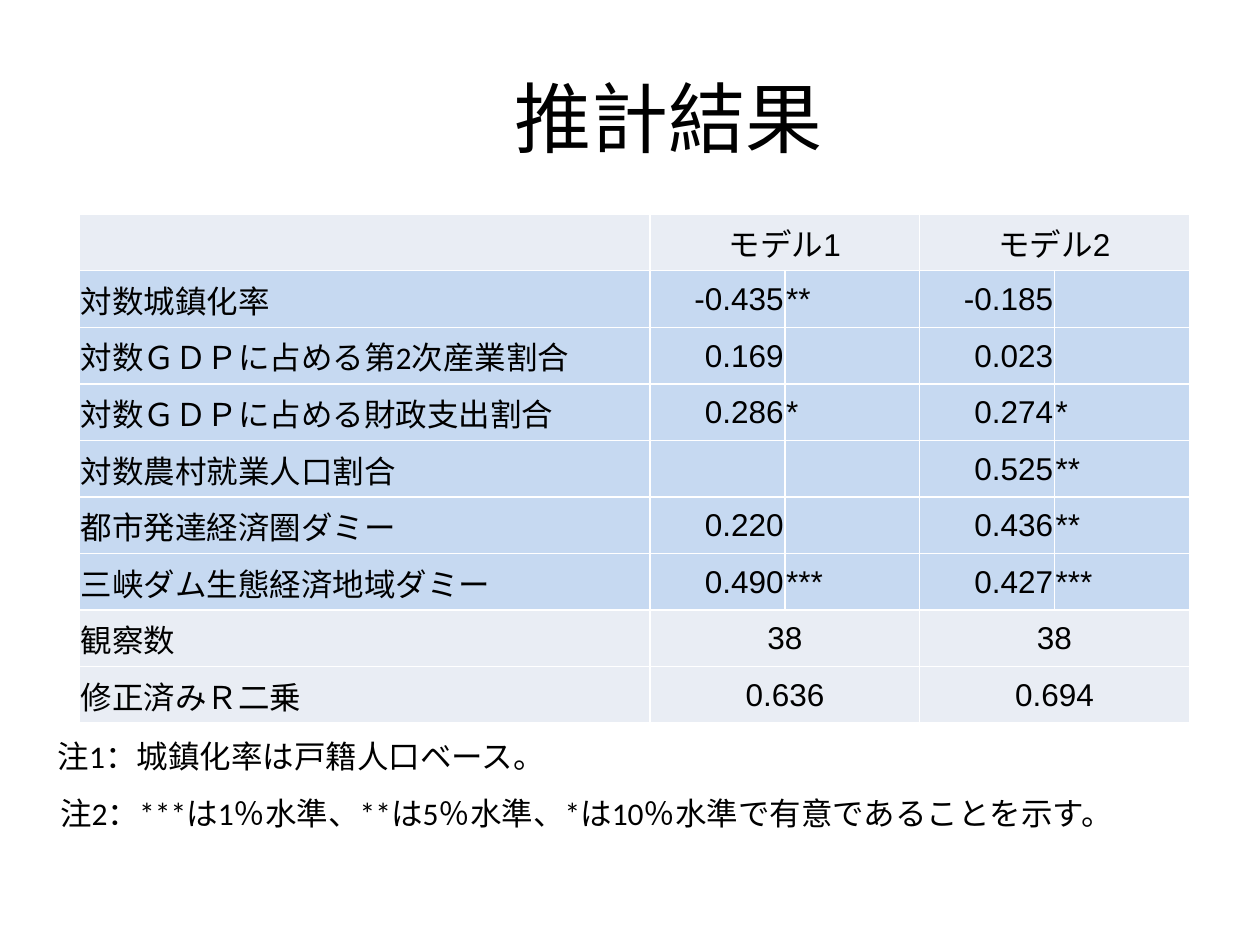
from lxml import etree
from pptx import Presentation
from pptx.dml.color import RGBColor
from pptx.enum.text import MSO_ANCHOR, PP_ALIGN
from pptx.oxml.ns import qn
from pptx.util import Inches, Pt

LEFT, CENTER, RIGHT = PP_ALIGN.LEFT, PP_ALIGN.CENTER, PP_ALIGN.RIGHT
TOP, MIDDLE = MSO_ANCHOR.TOP, MSO_ANCHOR.MIDDLE
BLACK = RGBColor(0x00, 0x00, 0x00)
GREY = RGBColor(0xE9, 0xED, 0xF4)
BLUE = RGBColor(0xC6, 0xD9, 0xF1)
BORDER = "FFFFFF"
CALIBRI, ARIAL, NOTO = "Calibri", "Arial", "Noto Sans CJK JP"

TEXTS = [
    ("　推計結果", (0.5, 0.3, 9, 1.25), 44, CENTER, MIDDLE),
    ("注1：城鎮化率は戸籍人口ベース。", (0.36, 5.8, 9.37, 0.4), 18, LEFT, TOP),
    ("注2：***は1％水準、**は5％水準、*は10％水準で有意であることを示す。",
     (0.38, 6.25, 9.37, 0.4), 18, LEFT, TOP),
]
HEADER = [("", CALIBRI, "モデル1", "モデル2")]
ESTIMATES = [
    ("対数城鎮化率", CALIBRI, "-0.435", "**", "-0.185", ""),
    ("対数ＧＤＰに占める第2次産業割合", CALIBRI, "0.169", "", "0.023", ""),
    ("対数ＧＤＰに占める財政支出割合", NOTO, "0.286", "*", "0.274", "*"),
    ("対数農村就業人口割合", NOTO, "", "", "0.525", "**"),
    ("都市発達経済圏ダミー", CALIBRI, "0.220", "", "0.436", "**"),
    ("三峡ダム生態経済地域ダミー", CALIBRI, "0.490", "***", "0.427", "***"),
]
SUMMARY = [
    ("観察数", CALIBRI, "38", "38"),
    ("修正済みＲ二乗", CALIBRI, "0.636", "0.694"),
]
ROWS = HEADER + ESTIMATES + SUMMARY
COL_WIDTHS = [4.53] + [1.07] * 4
TABLE_LEFT, TABLE_TOP, TABLE_HEIGHT = 0.63, 1.7, 4.04
CELL_FORMAT = {
    "margin_left": Inches(0.01), "margin_right": Inches(0.01),
    "margin_top": Inches(0.01), "margin_bottom": 0,
    "vertical_anchor": MIDDLE,
}


def write(tf, text, size, font, align):
    p = tf.paragraphs[0]
    p.alignment = align
    p.font.size = Pt(size)
    if not text:
        return
    r = p.add_run()
    r.text = text
    r.font.color.rgb = BLACK
    for name, value in {"name": font, "size": Pt(size), "bold": False}.items():
        setattr(r.font, name, value)


def add_borders(cell):
    tc_pr = cell._tc.get_or_add_tcPr()
    for i, side in enumerate(("a:lnL", "a:lnR", "a:lnT", "a:lnB")):
        ln = etree.Element(qn(side), w=str(Pt(1)))
        fill = etree.SubElement(ln, qn("a:solidFill"))
        etree.SubElement(fill, qn("a:srgbClr"), val=BORDER)
        tc_pr.insert(i, ln)


def add_text(slide, text, box, size, align, anchor):
    tf = slide.shapes.add_textbox(*map(Inches, box)).text_frame
    tf.word_wrap = True
    tf.vertical_anchor = anchor
    write(tf, text, size, CALIBRI, align)


def add_results(slide):
    table = slide.shapes.add_table(
        len(ROWS), len(COL_WIDTHS), Inches(TABLE_LEFT), Inches(TABLE_TOP),
        Inches(sum(COL_WIDTHS)), Inches(TABLE_HEIGHT)).table
    table.first_row = table.horz_banding = False
    for col, width in zip(table.columns, COL_WIDTHS):
        col.width = Inches(width)
    for i, (label, font, *values) in enumerate(ROWS):
        table.rows[i].height = Inches(TABLE_HEIGHT / len(ROWS))
        merged = len(values) == 2
        for j in range(len(COL_WIDTHS)):
            cell = table.cell(i, j)
            cell.fill.solid()
            cell.fill.fore_color.rgb = GREY if merged else BLUE
            for name, value in CELL_FORMAT.items():
                setattr(cell, name, value)
            add_borders(cell)
        write(table.cell(i, 0).text_frame, label, 18, font, LEFT)
        step = 2 if merged else 1
        for k, value in enumerate(values):
            j = 1 + k * step
            cell = table.cell(i, j)
            if merged:
                cell.merge(table.cell(i, j + 1))
            align = CENTER if merged else (RIGHT, LEFT)[k % 2]
            write(cell.text_frame, value, 18, ARIAL, align)


def main():
    prs = Presentation()
    prs.slide_width, prs.slide_height = Inches(10), Inches(7.5)
    s = prs.slides.add_slide(prs.slide_layouts[6])
    add_results(s)
    for item in TEXTS:
        add_text(s, *item)
    prs.save("out.pptx")


if __name__ == "__main__":
    main()
